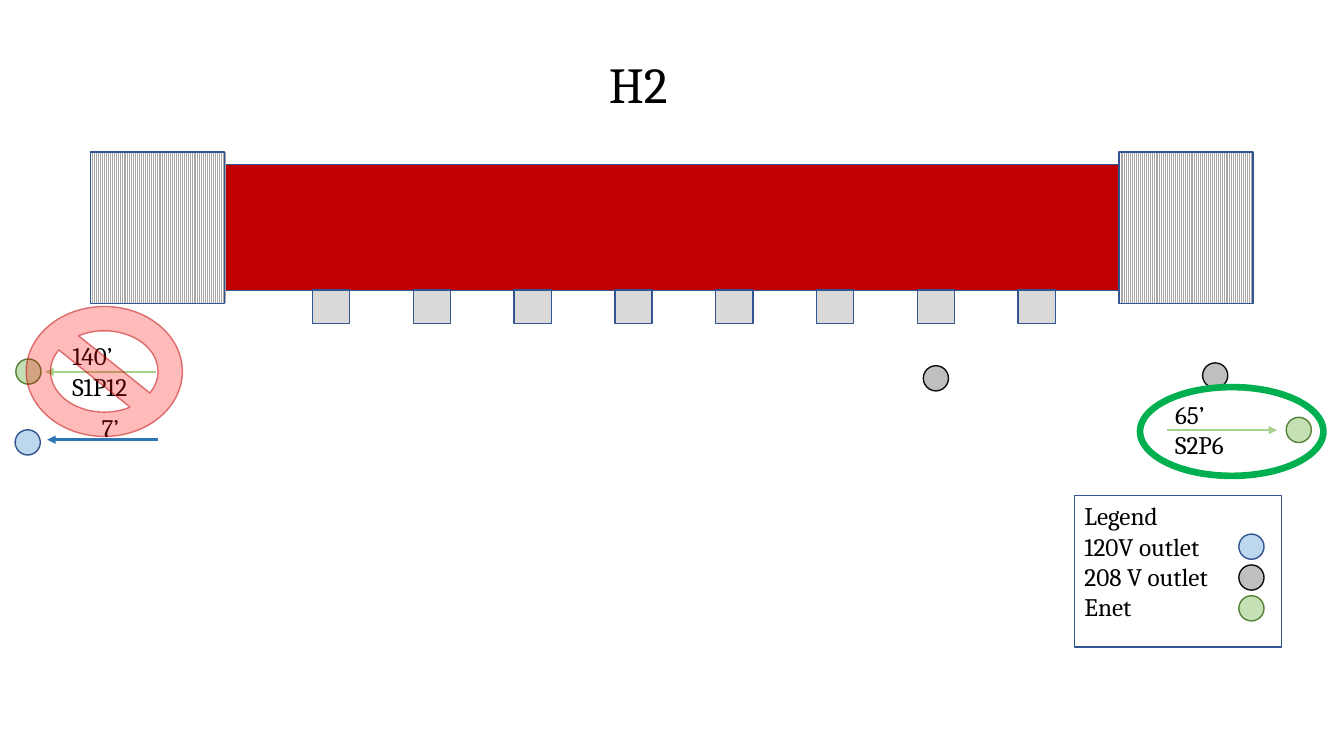
from dataclasses import dataclass

from lxml import etree
from pptx import Presentation
from pptx import util as u
from pptx.dml import color
from pptx.enum import dml, shapes, text
from pptx.oxml import ns


@dataclass(frozen=True)
class Theme:
    font: str = "Cambria"
    title_size: int = 36
    label_size: int = 18
    black: str = "000000"
    white: str = "FFFFFF"
    outline: str = "325491"
    red: str = "C00000"
    stop: str = "FF0000"
    module: str = "D9D9D9"
    stripe: str = "A6A6A6"
    arrow_green: str = "A9D18E"
    arrow_blue: str = "2E75B6"
    highlight: str = "00B050"
    outlet_120: tuple = ("BDD7EE", "325491")
    outlet_208: tuple = ("BFBFBF", "0D0D0D")
    enet: tuple = ("C5E0B4", "548235")


theme = Theme()
preset = shapes.MSO_SHAPE
rgb = color.RGBColor.from_string


def add_shape(parent, kind, left, top, width, height, fill=None, line=theme.outline, weight=1):
    shape = parent.add_shape(kind, u.Pt(left), u.Pt(top), u.Pt(width), u.Pt(height))
    shape.shadow.inherit = False
    if fill:
        shape.fill.solid()
        shape.fill.fore_color.rgb = rgb(fill)
    else:
        shape.fill.background()
    shape.line.color.rgb = rgb(line)
    shape.line.width = u.Pt(weight)
    return shape


def write_text(shape, content, size=theme.label_size, anchor=text.MSO_ANCHOR.TOP):
    frame = shape.text_frame
    frame.text = content
    frame.word_wrap = False
    frame.vertical_anchor = anchor
    for paragraph in frame.paragraphs:
        paragraph.alignment = text.PP_ALIGN.LEFT
        for run in paragraph.runs:
            run.font.name = theme.font
            run.font.size = u.Pt(size)
            run.font.color.rgb = rgb(theme.black)


presentation = Presentation()
presentation.slide_width = u.Pt(960)
presentation.slide_height = u.Pt(540)
slide = presentation.slides.add_slide(presentation.slide_layouts[5])

title = slide.shapes.title
title.left, title.top, title.width, title.height = u.Pt(427.7), u.Pt(34.5), u.Pt(59.8), u.Pt(51)
write_text(title, "H2", size=theme.title_size)

rack = slide.shapes.add_group_shape().shapes
add_shape(rack, preset.RECTANGLE, 151.2, 117.4, 648, 90, theme.red)
for index in range(8):
    add_shape(rack, preset.RECTANGLE, 223.2 + 72 * index, 207.2, 26.6, 23.8, theme.module)
for left in (64.8, 799.2):
    end_block = add_shape(rack, preset.RECTANGLE, left, 108.7, 95.8, 108)
    end_block.fill.patterned()
    end_block.fill.pattern = dml.MSO_PATTERN.LIGHT_VERTICAL
    end_block.fill.fore_color.rgb = rgb(theme.stripe)
    end_block.fill.back_color.rgb = rgb(theme.white)

legend = add_shape(slide.shapes, preset.RECTANGLE, 767.5, 354.2, 147.6, 108, weight=0.75)
write_text(legend, "Legend\v120V outlet\n208 V outlet\nEnet")
for index, (fill, line) in enumerate((theme.outlet_120, theme.outlet_208, theme.enet)):
    add_shape(slide.shapes, preset.OVAL, 884.9, 381.5 + 22 * index, 18, 18, fill, line)

enet_run = slide.shapes.add_group_shape().shapes
for parent, left, top, (fill, line) in (
    (slide.shapes, 11.3, 256.4, theme.enet),
    (slide.shapes, 659.5, 261.2, theme.outlet_208),
    (slide.shapes, 859, 259.2, theme.outlet_208),
    (slide.shapes, 10.8, 307, theme.outlet_120),
    (enet_run, 918.7, 298.1, theme.enet),
):
    add_shape(parent, preset.OVAL, left, top, 18, 18, fill, line)

for parent, start, end, level, line in (
    (slide.shapes, 111.6, 32.4, 265.6, theme.arrow_green),
    (slide.shapes, 113, 33.8, 314.1, theme.arrow_blue),
    (enet_run, 833.8, 912.2, 307.3, theme.arrow_green),
):
    arrow = parent.add_connector(
        shapes.MSO_CONNECTOR.STRAIGHT, u.Pt(start), u.Pt(level), u.Pt(end), u.Pt(level)
    )
    arrow.line.color.rgb = rgb(line)
    arrow.line.width = u.Pt(1.75)
    properties = arrow._element.spPr
    etree.SubElement(properties.find(ns.qn("a:ln")), ns.qn("a:tailEnd"), type="triangle")
    etree.SubElement(properties, ns.qn("a:effectLst"))

for parent, content, left, top, width, height in (
    (slide.shapes, "140’\nS1P12", 44.6, 239.8, 64, 51),
    (slide.shapes, "7’", 65.5, 290.9, 28.8, 29),
    (enet_run, "65’\nS2P6", 832.3, 281.5, 54, 51),
):
    label = parent.add_textbox(u.Pt(left), u.Pt(top), u.Pt(width), u.Pt(height))
    write_text(label, content)

add_shape(slide.shapes, preset.OVAL, 814.3, 276.5, 131, 63.4, line=theme.highlight, weight=4.75)

no_entry = add_shape(
    slide.shapes, preset.NO_SYMBOL, 18.7, 218.9, 111.6, 92.9, theme.stop, theme.red
)
for owner, opacity in ((no_entry.fill, 27000), (no_entry.line.fill, 50000)):
    tint = owner._xPr.find(ns.qn("a:solidFill"))[0]
    etree.SubElement(tint, ns.qn("a:alpha"), val=str(opacity))

presentation.save("out.pptx")
